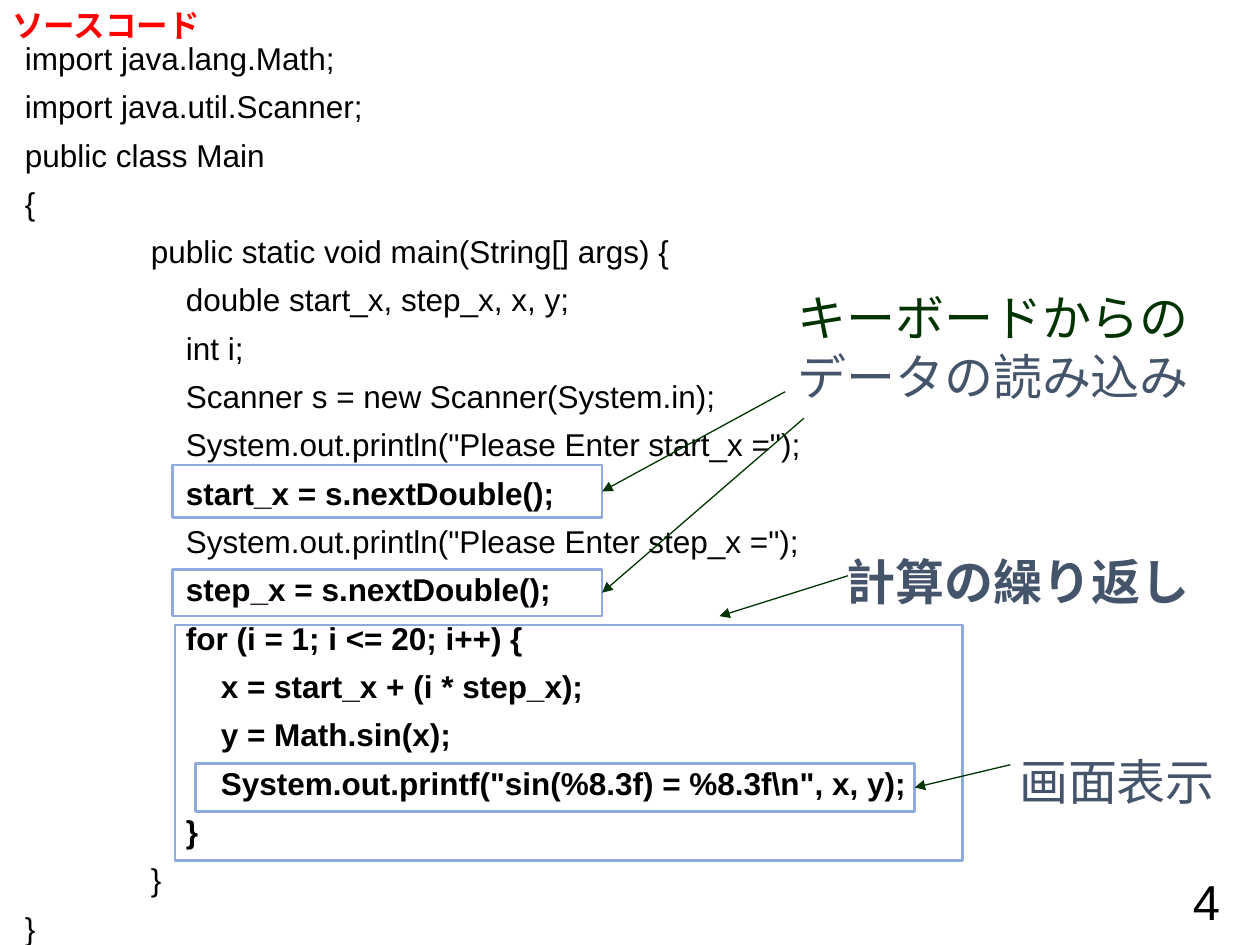
from lxml import etree
from pptx import Presentation
from pptx.dml.color import RGBColor
from pptx.enum.shapes import MSO_CONNECTOR, MSO_SHAPE
from pptx.enum.text import MSO_ANCHOR, PP_ALIGN
from pptx.oxml.ns import qn
from pptx.util import Pt

BLACK = RGBColor(0x00, 0x00, 0x00)
RED = RGBColor(0xFF, 0x00, 0x00)
GREEN = RGBColor(0x00, 0x33, 0x00)
SLATE = RGBColor(0x44, 0x54, 0x6A)
BLUE = RGBColor(0x8F, 0xAA, 0xDC)
STRAIGHT = MSO_CONNECTOR.STRAIGHT
RECTANGLE = MSO_SHAPE.RECTANGLE
MIDDLE = MSO_ANCHOR.MIDDLE
RIGHT = PP_ALIGN.RIGHT
RIGHT_SIDE = 3

CODE = r"""import java.lang.Math;
import java.util.Scanner;
public class Main
{
>public static void main(String[] args) {
>    double start_x, step_x, x, y;
>    int i;
>    Scanner s = new Scanner(System.in);
>    System.out.println("Please Enter start_x =");
>    start_x = s.nextDouble();
>    System.out.println("Please Enter step_x =");
>    step_x = s.nextDouble();
>    for (i = 1; i <= 20; i++) {
>        x = start_x + (i * step_x);
>        y = Math.sin(x);
>        System.out.printf("sin(%8.3f) = %8.3f\n", x, y);
>    }
>}
}""".splitlines()
BOLD_LINES = {9, 11, 12, 13, 14, 15, 16}

presentation = Presentation()
presentation.slide_width = Pt(720)
presentation.slide_height = Pt(540)
slide = presentation.slides.add_slide(presentation.slide_layouts[6])


def add_text_frame(left, top, width, height):
    frame = slide.shapes.add_textbox(Pt(left), Pt(top), Pt(width), Pt(height)).text_frame
    frame.word_wrap = True
    return frame


def add_run(paragraph, text, size, color, bold=False, font_name="Arial"):
    run = paragraph.add_run()
    run.text = text
    run.font.name = font_name
    run.font.size = Pt(size)
    run.font.bold = bold
    run.font.color.rgb = color


code_frame = add_text_frame(7.2, 18.72, 614.9, 393.1)
for index, line in enumerate(CODE):
    paragraph = code_frame.add_paragraph() if index else code_frame.paragraphs[0]
    paragraph.line_spacing = Pt(21.6)
    if index:
        paragraph.space_before = Pt(6)
    if line.startswith(">"):
        tab_list = etree.SubElement(paragraph._p.get_or_add_pPr(), qn("a:tabLst"))
        etree.SubElement(tab_list, qn("a:tab"), pos=str(Pt(72)), algn="l")
    add_run(paragraph, line.replace(">", "\t", 1) if line.startswith(">") else line,
            18, BLACK, index in BOLD_LINES)

title_frame = add_text_frame(0, 0, 318.2, 28.8)
add_run(title_frame.paragraphs[0], "ソースコード", 18, RED, True, "Calibri")

input_frame = add_text_frame(448.6, 160.6, 269.3, 108.7)
add_run(input_frame.paragraphs[0], "キーボードからの", 28, GREEN)
add_run(input_frame.add_paragraph(), "データの読み込み", 28, SLATE)

loop_frame = add_text_frame(476.6, 311.8, 215.3, 50.4)
add_run(loop_frame.paragraphs[0], "計算の繰り返し", 28, SLATE, True)

output_frame = add_text_frame(575.3, 426.2, 144.7, 50.4)
add_run(output_frame.paragraphs[0], "画面表示", 28, SLATE)

number_frame = add_text_frame(542.2, 500.4, 162, 28.8)
number_frame.vertical_anchor = MIDDLE
number_frame.paragraphs[0].alignment = RIGHT
add_run(number_frame.paragraphs[0], "4", 28, BLACK)

boxes = {}
for name, left, top, width, height in (
    ("start_x", 98.6, 265.7, 245.5, 30.2),
    ("step_x", 98.6, 325.4, 245.5, 26.6),
    ("loop", 100.1, 357.1, 450, 134.6),
    ("output", 111.6, 436.3, 411.1, 27.4),
):
    box = slide.shapes.add_shape(RECTANGLE, Pt(left), Pt(top), Pt(width), Pt(height))
    box.shadow.inherit = False
    box.fill.background()
    box.line.color.rgb = BLUE
    box.line.width = Pt(1.5)
    boxes[name] = box

for target, start_x, start_y, end_x, end_y in (
    ("start_x", 448.6, 223.9, 343.4, 283.7),
    ("step_x", 459.4, 239, 344.9, 340.6),
    (None, 484.6, 329, 411.1, 352.1),
    ("output", 577.4, 437, 522.7, 447.8),
):
    arrow = slide.shapes.add_connector(STRAIGHT, Pt(start_x), Pt(start_y), Pt(end_x), Pt(end_y))
    if target:
        arrow.end_connect(boxes[target], RIGHT_SIDE)
    arrow.line.color.rgb = GREEN
    arrow.line.width = Pt(0.75)
    etree.SubElement(arrow.line._get_or_add_ln(), qn("a:tailEnd"), type="triangle")
    etree.SubElement(arrow._element.spPr, qn("a:effectLst"))

presentation.save("out.pptx")
